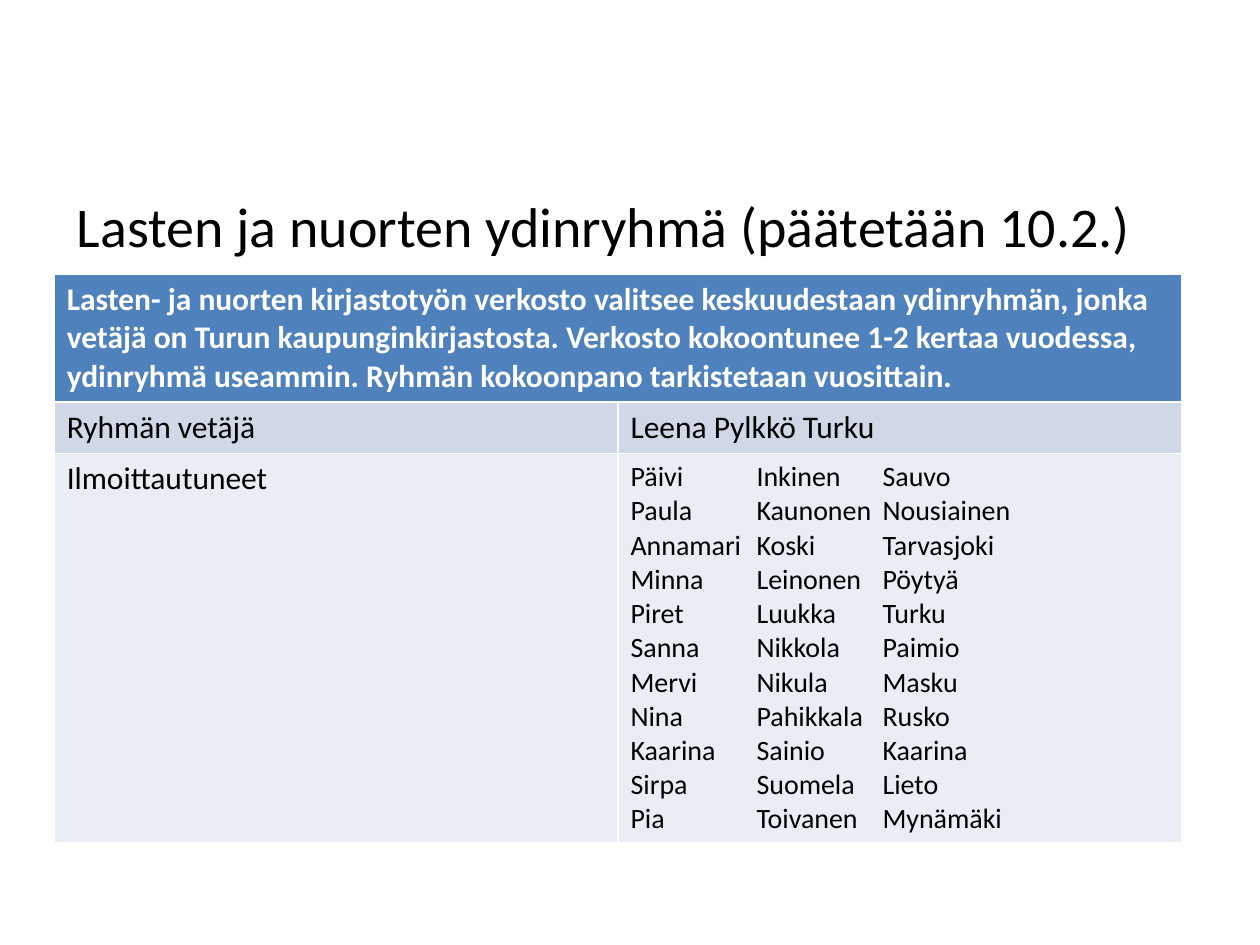
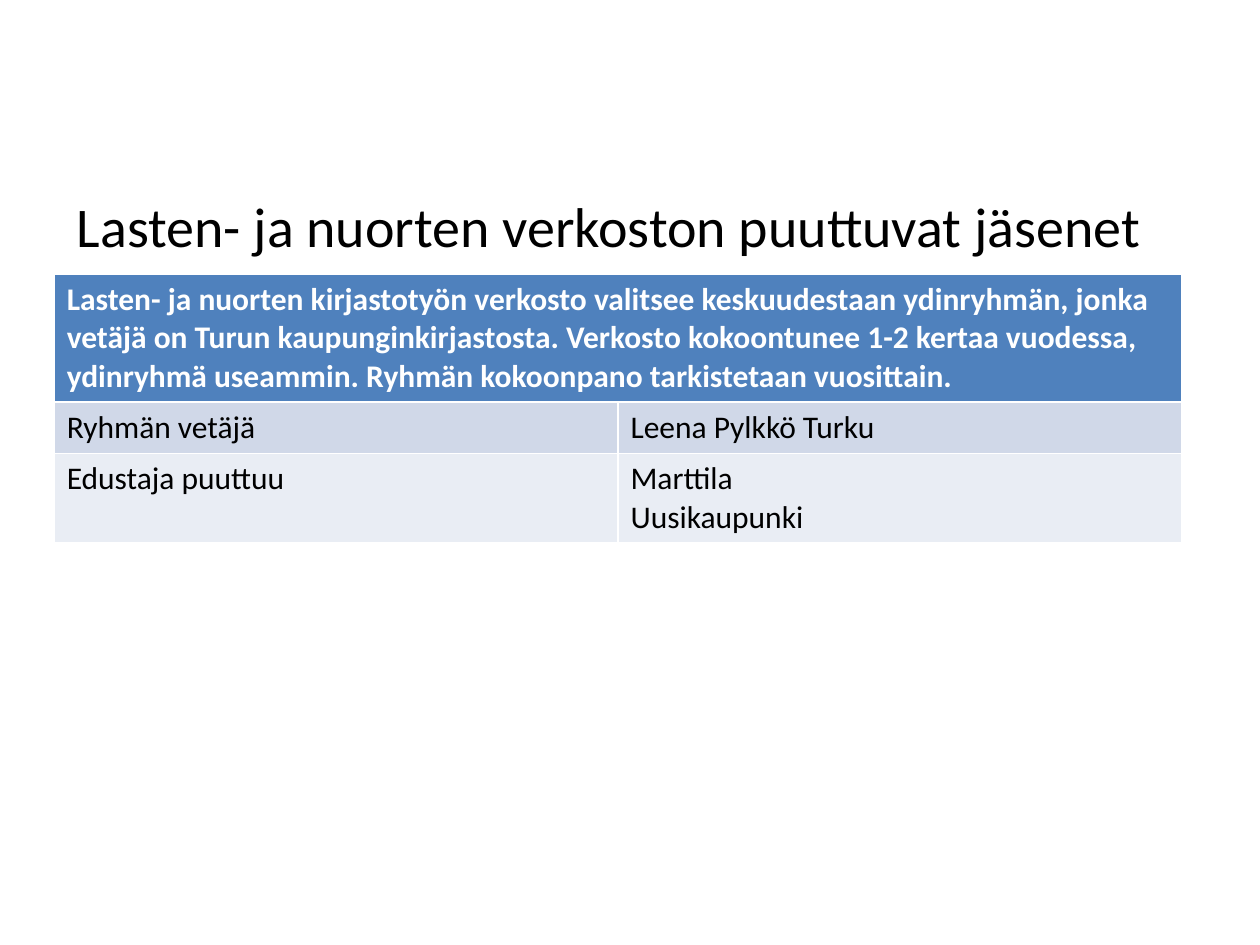
from lxml import etree
from pptx import Presentation
from pptx import util as u
from pptx.dml.color import RGBColor
from pptx.enum import text
from pptx.oxml.ns import qn

FONT = "Calibri"
BLACK, WHITE, BLUE = "000000", "FFFFFF", "4F81BD"
BANDS = ["D0D8E8", "E9EDF4"]
INTRO = (
    "Lasten- ja nuorten kirjastotyön verkosto valitsee keskuudestaan "
    "ydinryhmän, jonka vetäjä on Turun kaupunginkirjastosta. Verkosto "
    "kokoontunee 1-2 kertaa vuodessa, ydinryhmä useammin. Ryhmän "
    "kokoonpano tarkistetaan vuosittain."
)
LEADER = ("Ryhmän vetäjä", ["Leena Pylkkö Turku"])
MEMBERS = [
    ("Päivi", "Inkinen", "Sauvo"),
    ("Paula", "Kaunonen", "Nousiainen"),
    ("Annamari", "Koski", "Tarvasjoki"),
    ("Minna", "Leinonen", "Pöytyä"),
    ("Piret", "Luukka", "Turku"),
    ("Sanna", "Nikkola", "Paimio"),
    ("Mervi", "Nikula", "Masku"),
    ("Nina", "Pahikkala", "Rusko"),
    ("Kaarina", "Sainio", "Kaarina"),
    ("Sirpa", "Suomela", "Lieto"),
    ("Pia", "Toivanen", "Mynämäki"),
]
PAGES = [
    ("Lasten ja nuorten ydinryhmä (päätetään 10.2.)",
     "Ilmoittautuneet", ["\t".join(m) for m in MEMBERS], 16, 3.08),
    ("Lasten- ja nuorten verkoston puuttuvat jäsenet",
     "Edustaja puuttuu", ["Marttila", "Uusikaupunki"], 18, 0.71),
]


def color(code):
    return RGBColor.from_string(code)


def write(frame, lines, size, code=BLACK, bold=False):
    for i, line in enumerate(lines):
        para = frame.paragraphs[0] if i == 0 else frame.add_paragraph()
        para.alignment = text.PP_ALIGN.LEFT
        if "\t" in line:
            tabs = etree.SubElement(para._p.get_or_add_pPr(), qn("a:tabLst"))
            for stop in range(1, line.count("\t") + 1):
                etree.SubElement(tabs, qn("a:tab"), pos=str(u.Inches(stop)), algn="l")
        run = para.add_run()
        run.text = line
        run.font.name = FONT
        run.font.size = u.Pt(size)
        run.font.bold = bold
        run.font.color.rgb = color(code)


deck = Presentation()
deck.slide_width, deck.slide_height = u.Inches(10), u.Inches(7.5)
wide, high = deck.slide_width, deck.slide_height

for name, label, items, size, tall in PAGES:
    slide = deck.slides.add_slide(deck.slide_layouts[5])
    title = slide.shapes.title
    title.left, title.top = int(wide * 0.051), int(high * 0.196)
    title.width, title.height = int(wide * 0.9), int(high * 0.09)
    title.text_frame.vertical_anchor = text.MSO_ANCHOR.TOP
    title.text_frame.word_wrap = True
    title.text_frame.auto_size = text.MSO_AUTO_SIZE.NONE
    write(title.text_frame, [name], 32)

    rows = [1.01, 0.41, tall]
    table = slide.shapes.add_table(
        len(rows), 2, int(wide * 0.043), int(high * 0.29),
        int(wide * 0.895), u.Inches(sum(rows))).table
    for row, height in zip(table.rows, rows):
        row.height = u.Inches(height)

    head = table.cell(0, 0)
    head.merge(table.cell(0, 1))
    head.fill.solid()
    head.fill.fore_color.rgb = color(BLUE)
    write(head.text_frame, [INTRO], 18, WHITE, True)

    body = [(*LEADER, 18), (label, items, size)]
    for r, (key, lines, points) in enumerate(body):
        for c, (part, pt) in enumerate([([key], 18), (lines, points)]):
            cell = table.cell(r + 1, c)
            cell.fill.solid()
            cell.fill.fore_color.rgb = color(BANDS[r])
            write(cell.text_frame, part, pt)

deck.save("out.pptx")
